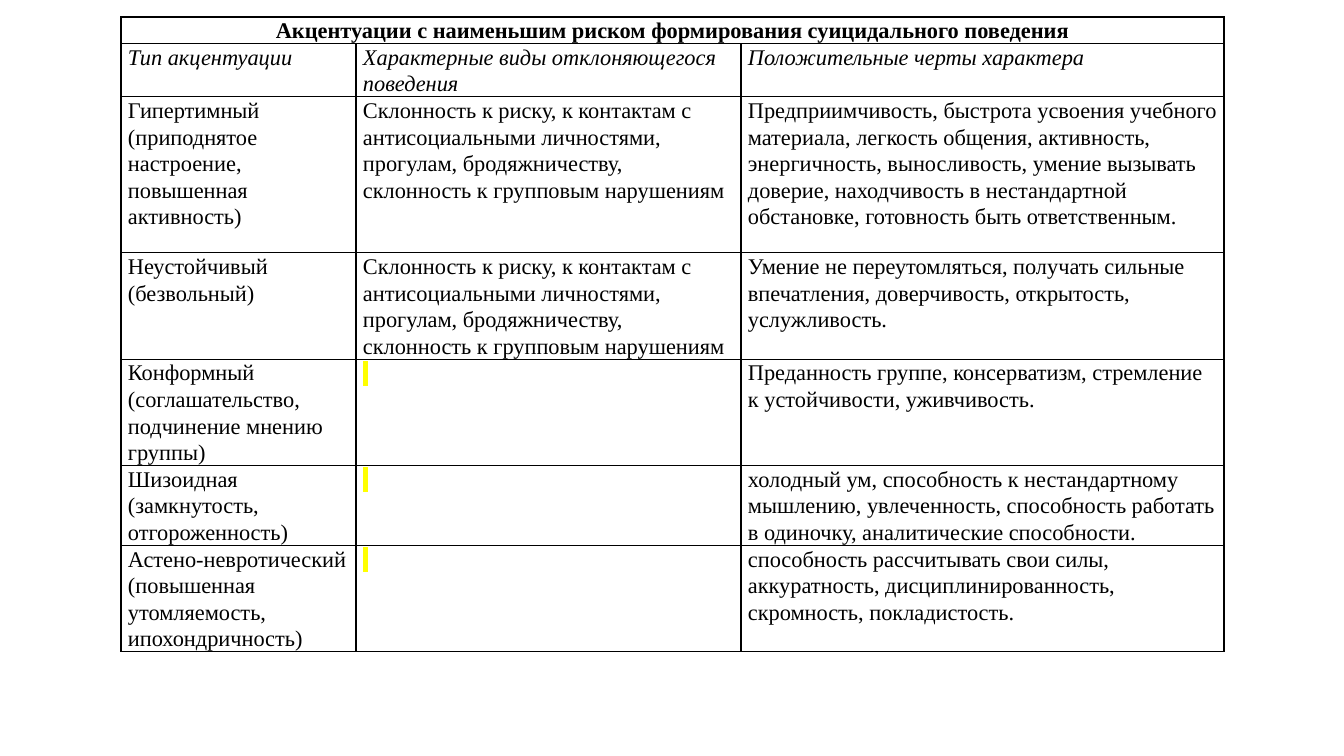
from lxml.etree import SubElement
from pptx import Presentation
from pptx.dml.color import RGBColor
from pptx.enum.text import PP_ALIGN
from pptx.oxml.ns import qn
from pptx.util import Emu, Pt

TITLE = "Акцентуации с наименьшим риском формирования суицидального поведения"
HEADINGS = ("Тип акцентуации", "Характерные виды отклоняющегося поведения",
            "Положительные черты характера")
RISKS = ("Склонность к риску, к контактам с антисоциальными личностями, "
         "прогулам, бродяжничеству, склонность к групповым нарушениям")
MARKED_BLANK = " "
ACCENTUATIONS = [
    ("Гипертимный (приподнятое настроение, повышенная активность)", RISKS,
     "Предприимчивость, быстрота усвоения учебного материала, легкость общения, "
     "активность, энергичность, выносливость, умение вызывать доверие, находчивость "
     "в нестандартной обстановке, готовность быть ответственным."),
    ("Неустойчивый (безвольный)", RISKS,
     "Умение не переутомляться, получать сильные впечатления, доверчивость, "
     "открытость, услужливость."),
    ("Конформный (соглашательство, подчинение мнению группы)", MARKED_BLANK,
     "Преданность группе, консерватизм, стремление к устойчивости, уживчивость."),
    ("Шизоидная (замкнутость, отгороженность)", MARKED_BLANK,
     "холодный ум, способность к нестандартному мышлению, увлеченность, "
     "способность работать в одиночку, аналитические способности."),
    ("Астено-невротический (повышенная утомляемость, ипохондричность)", MARKED_BLANK,
     "способность рассчитывать свои силы, аккуратность, дисциплинированность, "
     "скромность, покладистость."),
]
ROWS = [(TITLE, "", ""), HEADINGS, *ACCENTUATIONS]
LINES_PER_ROW = (1, 2, 6, 4, 4, 3, 4)
COLUMN_WIDTHS = (235, 385, 483)
LEFT, TOP, LINE_HEIGHT, SIDE_MARGIN = 121, 17, 26, 7
BLACK, WHITE, YELLOW = "000000", "FFFFFF", "FFFF00"


def px(length):
    return Emu(round(length * 914400 / 100.8))


def color(code):
    return RGBColor.from_string(code)


def add_borders(cell):
    properties = cell._tc.get_or_add_tcPr()
    for side in ("a:lnL", "a:lnR", "a:lnT", "a:lnB"):
        line = SubElement(properties, qn(side), w=str(Pt(1)))
        fill = SubElement(line, qn("a:solidFill"))
        SubElement(fill, qn("a:srgbClr"), val=BLACK)


def highlight(span):
    mark = SubElement(span._r.get_or_add_rPr(), qn("a:highlight"))
    SubElement(mark, qn("a:srgbClr"), val=YELLOW)


def fill_cell(cell, text, bold, italic):
    add_borders(cell)
    cell.fill.solid()
    cell.fill.fore_color.rgb = color(WHITE)
    cell.margin_left = cell.margin_right = px(SIDE_MARGIN)
    cell.margin_top = cell.margin_bottom = 0
    para = cell.text_frame.paragraphs[0]
    para.line_spacing = 1.07
    para.alignment = PP_ALIGN.CENTER if bold else PP_ALIGN.LEFT
    font = para.font
    font.name, font.size = "Times New Roman", Pt(16)
    font.bold, font.italic = bold, italic
    font.color.rgb = color(BLACK)
    if text:
        span = para.add_run()
        span.text = text
        if text == MARKED_BLANK:
            highlight(span)


def main():
    deck = Presentation()
    deck.slide_width, deck.slide_height = px(1344), px(756)
    page = deck.slides.add_slide(deck.slide_layouts[6])
    table = page.shapes.add_table(
        len(ROWS), len(COLUMN_WIDTHS), px(LEFT), px(TOP),
        px(sum(COLUMN_WIDTHS)), px(sum(LINES_PER_ROW) * LINE_HEIGHT)).table
    table.first_row = table.horz_banding = False
    for column, width in zip(table.columns, COLUMN_WIDTHS):
        column.width = px(width)
    for index, (row, lines) in enumerate(zip(table.rows, LINES_PER_ROW)):
        row.height = px(lines * LINE_HEIGHT)
        for cell, text in zip(row.cells, ROWS[index]):
            fill_cell(cell, text, bold=index == 0, italic=index == 1)
    table.cell(0, 0).merge(table.cell(0, 2))
    deck.save("out.pptx")


if __name__ == "__main__":
    main()
